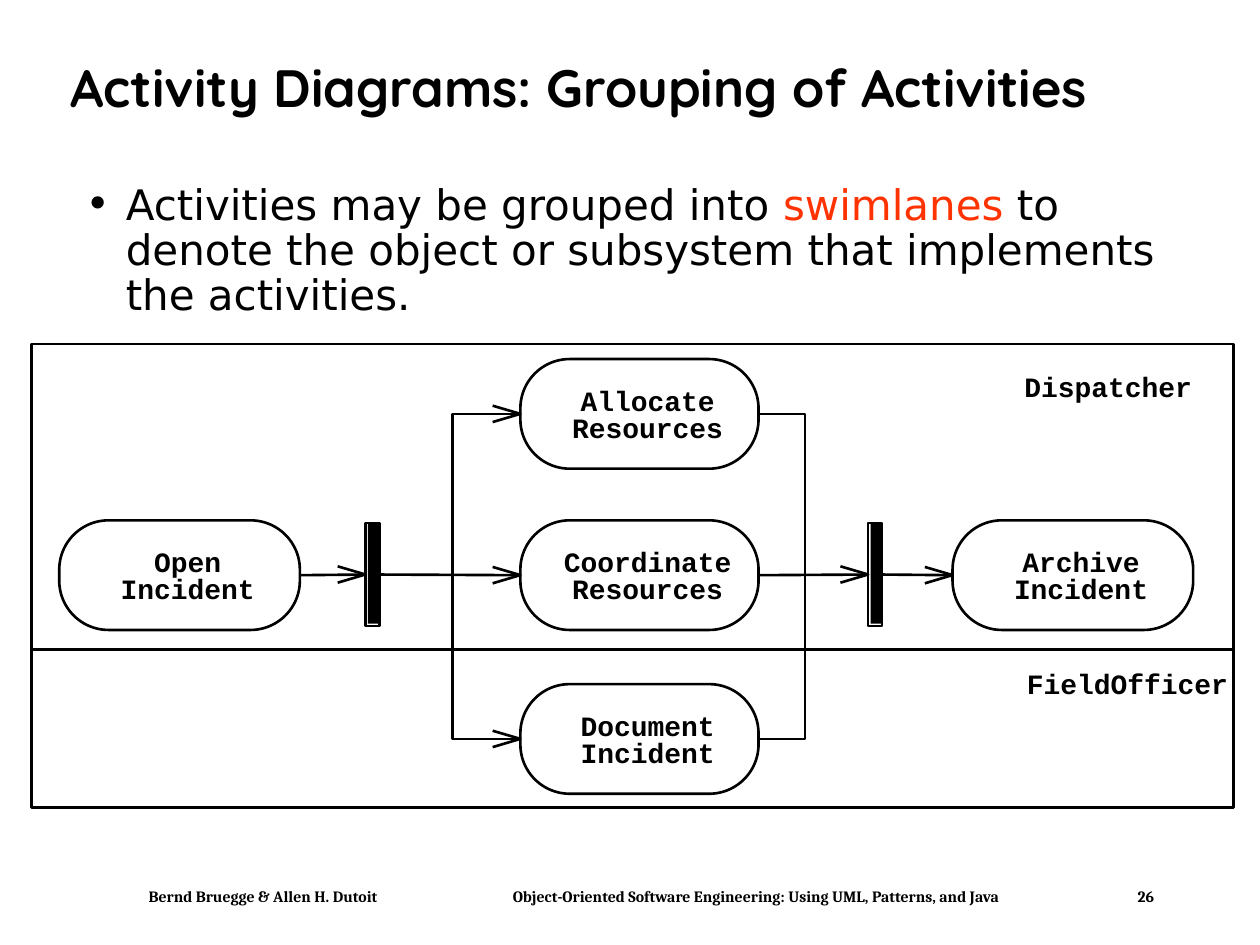
from dataclasses import dataclass
from typing import NamedTuple, Optional

from lxml.etree import SubElement
from pptx import Presentation
from pptx.dml.color import RGBColor
from pptx.enum.shapes import MSO_CONNECTOR as Connector, MSO_SHAPE as Shape
from pptx.enum.text import MSO_ANCHOR as Anchor, PP_ALIGN as Align
from pptx.oxml.ns import qn
from pptx.util import Inches, Pt


@dataclass(frozen=True)
class Theme:
    black: RGBColor = RGBColor(0x00, 0x00, 0x00)
    accent: RGBColor = RGBColor(0xFF, 0x33, 0x00)
    title_font: str = "Quicksand"
    body_font: str = "DejaVu Sans"
    label_font: str = "Courier New"
    footer_font: str = "Cambria"
    title_size: float = 30
    body_size: float = 24
    label_size: float = 16
    label_spacing: float = 15.5
    footer_size: float = 9
    line_width: float = 1.5


class Box(NamedTuple):
    left: float
    top: float
    width: float
    height: float

    @property
    def middle(self) -> float:
        return self.top + self.height / 2


class Action(NamedTuple):
    name: str
    box: Box


class Label(NamedTuple):
    text: str
    box: Box


THEME = Theme()
TOP, LEFT, BOTTOM, RIGHT = range(4)
MIDDLE_COLUMN, MIDDLE_ROW = 4.13, 4.13
ACTION_HEIGHT = 0.87
LANES = (Box(0.25, 2.73, 9.54, 2.43), Box(0.25, 5.15, 9.54, 1.26))
LANE_LABELS = (
    Label("Dispatcher", Box(8.13, 2.93, 1.33, 0.27)),
    Label("FieldOfficer", Box(8.15, 5.29, 1.6, 0.27)),
)
ACTIONS = (
    Action("Open\nIncident", Box(0.47, MIDDLE_ROW, 1.91, ACTION_HEIGHT)),
    Action("Allocate\nResources", Box(MIDDLE_COLUMN, 2.85, 1.89, ACTION_HEIGHT)),
    Action("Coordinate\nResources", Box(MIDDLE_COLUMN, MIDDLE_ROW, 1.89, ACTION_HEIGHT)),
    Action("Document\nIncident", Box(MIDDLE_COLUMN, 5.43, 1.89, ACTION_HEIGHT)),
    Action("Archive\nIncident", Box(7.56, MIDDLE_ROW, 1.91, ACTION_HEIGHT)),
)
FORK = Box(2.9, 4.15, 0.11, 0.82)
JOIN = Box(6.89, 4.15, 0.11, 0.82)
FOOTER = (
    Label("Bernd Bruegge & Allen H. Dutoit", Box(1.18, 6.99, 2.2, 0.25)),
    Label("Object-Oriented Software Engineering: Using UML, Patterns, and Java",
          Box(4.07, 6.99, 4.2, 0.25)),
    Label("26", Box(9.03, 6.99, 0.4, 0.25)),
)


def write_text(shape, text: str, *, font: str, size: float, bold: bool = False,
               align=Align.LEFT, anchor=Anchor.TOP, spacing=None, wrap: bool = True,
               margins=(0, 0, 0, 0), highlight: Optional[str] = None) -> None:
    """Write one paragraph per line; margins run left, top, right, bottom."""
    frame = shape.text_frame
    frame.word_wrap = wrap
    frame.vertical_anchor = anchor
    (frame.margin_left, frame.margin_top,
     frame.margin_right, frame.margin_bottom) = map(Inches, margins)
    for index, line in enumerate(text.split("\n")):
        paragraph = frame.add_paragraph() if index else frame.paragraphs[0]
        paragraph.alignment = align
        if spacing is not None:
            paragraph.line_spacing = spacing
        parts = line.partition(highlight) if highlight else (line,)
        for part in parts:
            run = paragraph.add_run()
            run.text = part
            run.font.name = font
            run.font.size = Pt(size)
            run.font.bold = bold
            run.font.color.rgb = THEME.accent if part == highlight else THEME.black


def add_text(slide, text: str, box: Box, **text_format):
    shape = slide.shapes.add_textbox(*map(Inches, box))
    write_text(shape, text, **text_format)
    return shape


def add_bullet(paragraph, indent: float) -> None:
    properties = paragraph._p.get_or_add_pPr()
    properties.set("marL", str(Inches(indent)))
    properties.set("indent", str(-Inches(indent)))
    SubElement(properties, qn("a:buFont")).set("typeface", THEME.body_font)
    SubElement(properties, qn("a:buChar")).set("char", "•")


def set_line(shape) -> None:
    shape.line.color.rgb = THEME.black
    shape.line.width = Pt(THEME.line_width)


def add_outline(slide, kind, box: Box):
    shape = slide.shapes.add_shape(kind, *map(Inches, box))
    shape.shadow.inherit = False
    shape.fill.background()
    set_line(shape)
    return shape


def add_action(slide, action: Action):
    shape = add_outline(slide, Shape.ROUNDED_RECTANGLE, action.box)
    shape.adjustments[0] = 0.45
    write_text(shape, action.name, font=THEME.label_font, size=THEME.label_size, bold=True,
               align=Align.CENTER, anchor=Anchor.MIDDLE, spacing=Pt(THEME.label_spacing),
               margins=(0.13, 0.05, 0, 0))
    return shape


def add_bar(slide, box: Box):
    """Draw a synchronization bar and return its outline."""
    core = slide.shapes.add_shape(
        Shape.RECTANGLE, *map(Inches, (box.left + 0.02, box.top, 0.09, 0.8)))
    core.shadow.inherit = False
    core.fill.solid()
    core.fill.fore_color.rgb = THEME.black
    core.line.fill.background()
    return add_outline(slide, Shape.RECTANGLE, box)


def add_polyline(slide, points: list[tuple[float, float]]) -> None:
    start, *others = [(Inches(x), Inches(y)) for x, y in points]
    builder = slide.shapes.build_freeform(*start)
    builder.add_line_segments(others, close=False)
    shape = builder.convert_to_shape()
    shape.shadow.inherit = False
    shape.fill.background()
    set_line(shape)


def add_arrow(slide, target, target_box: Box, *, source=None, start_x: float = 0) -> None:
    """Draw an arrow to the left side of target, from source or from start_x."""
    tip_x, tip_y = target_box.left, target_box.middle
    connector = slide.shapes.add_connector(
        Connector.STRAIGHT, *map(Inches, (start_x, tip_y, tip_x, tip_y)))
    if source is not None:
        connector.begin_connect(source, RIGHT)
    connector.end_connect(target, LEFT)
    set_line(connector)
    SubElement(connector._element.spPr, qn("a:effectLst"))
    add_polyline(slide, [(tip_x - 0.22, tip_y - 0.065), (tip_x, tip_y),
                         (tip_x - 0.22, tip_y + 0.065)])


def add_bracket(slide, end_x: float, spine_x: float, top: float, bottom: float) -> None:
    add_polyline(slide, [(end_x, top), (spine_x, top), (spine_x, bottom), (end_x, bottom)])


def add_diagram(slide) -> None:
    opening, allocate, coordinate, document, archive = (
        add_action(slide, action) for action in ACTIONS)
    _, allocate_box, coordinate_box, document_box, archive_box = (
        action.box for action in ACTIONS)
    fork, join = add_bar(slide, FORK), add_bar(slide, JOIN)

    add_arrow(slide, fork, FORK, source=opening)
    add_arrow(slide, coordinate, coordinate_box, source=fork)
    add_arrow(slide, join, JOIN, source=coordinate)
    add_arrow(slide, archive, archive_box, source=join)

    branch_x = 3.87
    add_arrow(slide, allocate, allocate_box, start_x=branch_x)
    add_arrow(slide, document, document_box, start_x=branch_x)
    branches = (allocate_box.middle, document_box.middle)
    add_bracket(slide, branch_x, 3.59, *branches)
    add_bracket(slide, MIDDLE_COLUMN + allocate_box.width, 6.39, *branches)

    for lane in LANES:
        add_outline(slide, Shape.RECTANGLE, lane)
    for label in LANE_LABELS:
        add_text(slide, label.text, label.box, font=THEME.label_font,
                 size=THEME.label_size, bold=True, wrap=False)


def main() -> None:
    presentation = Presentation()
    presentation.slide_width, presentation.slide_height = Inches(10), Inches(7.5)
    slide = presentation.slides.add_slide(presentation.slide_layouts[6])
    for label in FOOTER:
        add_text(slide, label.text, label.box, font=THEME.footer_font, size=THEME.footer_size,
                 bold=True, anchor=Anchor.MIDDLE, wrap=False)
    margins = (0.1, 0.05, 0.1, 0.05)
    add_text(slide, "Activity Diagrams: Grouping of Activities", Box(0.46, 0.25, 8.92, 0.94),
             font=THEME.title_font, size=THEME.title_size, bold=True, anchor=Anchor.MIDDLE,
             spacing=0.9, margins=margins)
    body = add_text(
        slide, "Activities may be grouped into swimlanes to denote the object or subsystem "
        "that implements the activities.", Box(0.58, 1.41, 8.75, 5.25), font=THEME.body_font,
        size=THEME.body_size, spacing=0.9, margins=margins, highlight="swimlanes")
    add_bullet(body.text_frame.paragraphs[0], 0.32)
    add_diagram(slide)
    presentation.save("out.pptx")


if __name__ == "__main__":
    main()
